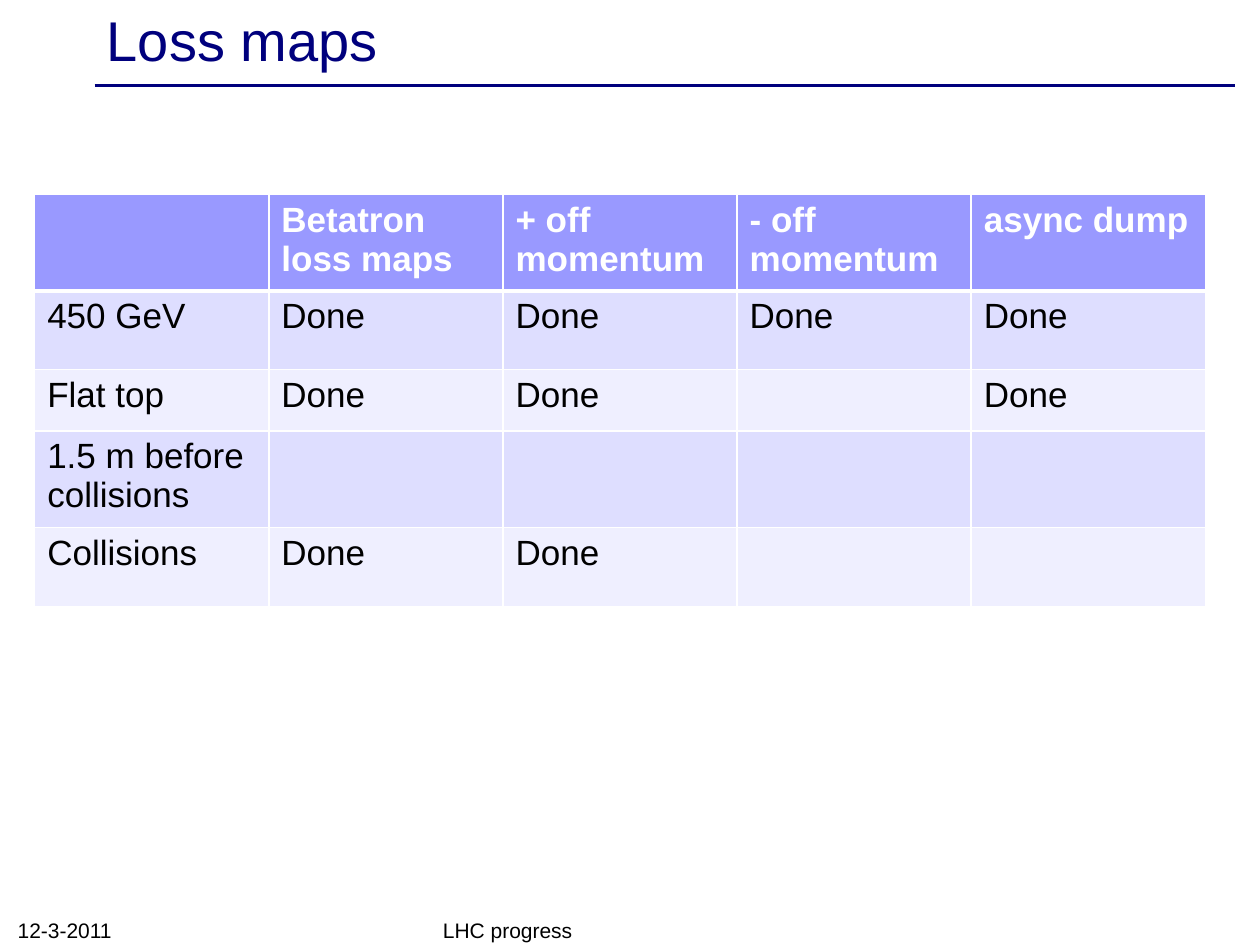
from lxml import etree
from pptx import Presentation
from pptx import util as u
from pptx.dml.color import RGBColor
from pptx.enum import shapes, text
from pptx.oxml import ns

Pt = u.Pt
FONT = "Arial"
NAVY = RGBColor(0x00, 0x00, 0x7D)
BLACK = RGBColor(0x00, 0x00, 0x00)
WHITE = RGBColor(0xFF, 0xFF, 0xFF)
HEADER_FILL = RGBColor(0x99, 0x99, 0xFF)
BAND_FILLS = (RGBColor(0xDE, 0xDE, 0xFF), RGBColor(0xEF, 0xEF, 0xFF))

COLUMN_WIDTH = 133.8
ROW_HEIGHTS = (51, 45, 35, 53, 45)
STATUS = (
    ("", "Betatron\nloss maps", "+ off momentum", "- off momentum", "async dump"),
    ("450 GeV", "Done", "Done", "Done", "Done"),
    ("Flat top", "Done", "Done", "", "Done"),
    ("1.5 m before collisions", "", "", "", ""),
    ("Collisions", "Done", "Done", "", ""),
)


def style_text(frame, size, color, bold=False):
    for paragraph in frame.paragraphs:
        paragraph.alignment = text.PP_ALIGN.LEFT
        for run in paragraph.runs:
            run.font.name = FONT
            run.font.size = Pt(size)
            run.font.bold = bold
            run.font.color.rgb = color


def add_label(slide, wording, left, top, width, height, size, color, anchor):
    frame = slide.shapes.add_textbox(Pt(left), Pt(top), Pt(width), Pt(height)).text_frame
    frame.word_wrap = True
    frame.vertical_anchor = anchor
    frame.text = wording
    style_text(frame, size, color)


def add_rule(slide, left, right, y):
    rule = slide.shapes.add_connector(
        shapes.MSO_CONNECTOR.STRAIGHT, Pt(left), Pt(y), Pt(right), Pt(y))
    rule.line.color.rgb = NAVY
    rule.line.width = Pt(2)
    etree.SubElement(rule._element.spPr, ns.qn("a:effectLst"))


def set_borders(cell, widths):
    """Draw white borders, given as {side: width in points} in L, R, T, B order."""
    properties = cell._tc.get_or_add_tcPr()
    for position, (side, width) in enumerate(widths.items()):
        border = etree.Element(ns.qn(f"a:ln{side}"), w=str(Pt(width)))
        fill = etree.SubElement(border, ns.qn("a:solidFill"))
        etree.SubElement(fill, ns.qn("a:srgbClr"), val=str(WHITE))
        properties.insert(position, border)


def add_status_table(slide, left, top):
    table = slide.shapes.add_table(
        len(STATUS), len(STATUS[0]), Pt(left), Pt(top),
        Pt(COLUMN_WIDTH * len(STATUS[0])), Pt(sum(ROW_HEIGHTS))).table
    for column in table.columns:
        column.width = Pt(COLUMN_WIDTH)
    for r, (height, entries) in enumerate(zip(ROW_HEIGHTS, STATUS)):
        table.rows[r].height = Pt(height)
        header = r == 0
        for c, entry in enumerate(entries):
            cell = table.cell(r, c)
            cell.text_frame.text = entry
            style_text(cell.text_frame, 20, WHITE if header else BLACK, header)
            cell.fill.solid()
            cell.fill.fore_color.rgb = HEADER_FILL if header else BAND_FILLS[(r - 1) % 2]
            set_borders(cell, {"L": 1, "R": 1, "T": 3 if r == 1 else 1,
                               "B": 3 if header else 1})


def main():
    deck = Presentation()
    deck.slide_width, deck.slide_height = Pt(720), Pt(540)
    slide = deck.slides.add_slide(deck.slide_layouts[6])

    # Title with its rule
    add_rule(slide, 54, 706, 49)
    add_label(slide, "Loss maps", 54, 2, 648, 41, 32, NAVY, text.MSO_ANCHOR.MIDDLE)

    # Status of the loss maps
    add_status_table(slide, 19.8, 111)

    # Footer
    add_label(slide, "LHC progress", 246, 522, 228, 20, 12, BLACK, text.MSO_ANCHOR.BOTTOM)
    add_label(slide, "12-3-2011", 3, 521, 168, 21, 12, BLACK, text.MSO_ANCHOR.BOTTOM)

    deck.save("out.pptx")


if __name__ == "__main__":
    main()
